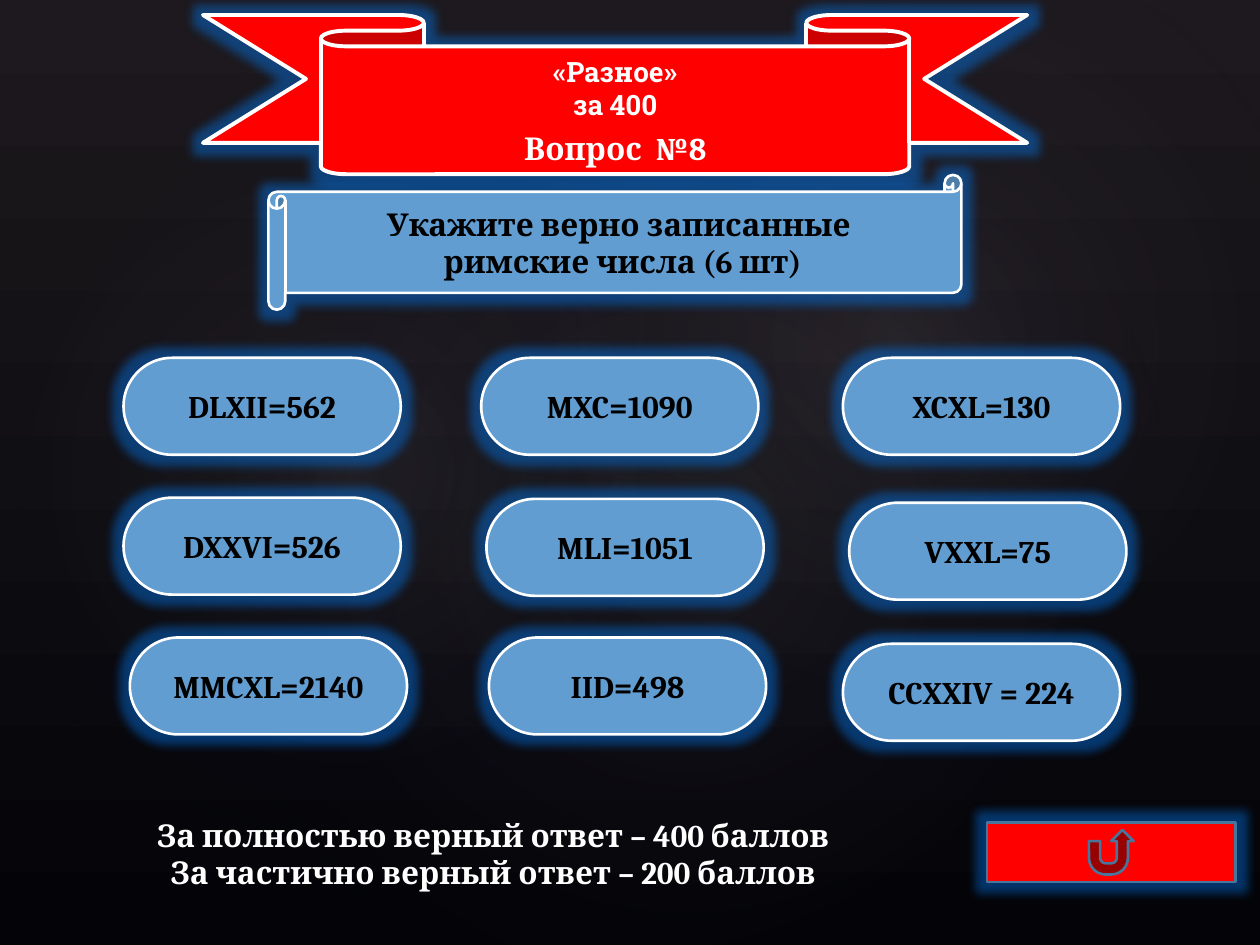
from lxml.etree import SubElement
from pptx import Presentation
from pptx.dml.color import RGBColor
from pptx.enum.shapes import MSO_SHAPE
from pptx.enum.text import MSO_ANCHOR, MSO_AUTO_SIZE, PP_ALIGN
from pptx.oxml import parse_xml
from pptx.oxml.ns import nsdecls, qn
from pptx.util import Pt

BLACK = RGBColor(0x00, 0x00, 0x00)
WHITE = RGBColor(0xFF, 0xFF, 0xFF)
RED = RGBColor(0xFF, 0x00, 0x00)
BLUE = RGBColor(0x62, 0x9D, 0xD1)
STEEL = RGBColor(0x49, 0x74, 0x9B)
GLOW = RGBColor(0x00, 0x7F, 0xFF)
HAZE = RGBColor(0xC4, 0xBC, 0xC6)
NAVY = RGBColor(0x24, 0x28, 0x52)
TOP = RGBColor(0x1D, 0x19, 0x1E)
BASE = RGBColor(0x04, 0x04, 0x08)

BOLD = {"name": "Cambria", "size": Pt(18), "bold": True}
SLAB = {"name": "Roboto Slab", "size": Pt(16), "bold": True}
FRAME = {"word_wrap": True, "vertical_anchor": MSO_ANCHOR.MIDDLE,
         "auto_size": MSO_AUTO_SIZE.NONE,
         "margin_left": Pt(7.2), "margin_right": Pt(7.2),
         "margin_top": Pt(3.6), "margin_bottom": Pt(3.6)}

HAZES = [((108, 82, 570, 449), 328.7, 7),
         ((-21.6, 92, 436, 353), 294.3, 8),
         ((258, 9.4, 510, 374), 328.7, 8)]
CARDS = [("DLXII=562", 70.6, 204.5), ("MXC=1090", 275, 204.5),
         ("XCXL=130", 481.7, 204.5), ("DXXVI=526", 70.6, 284.4),
         ("MLI=1051", 278, 285.1), ("VXXL=75", 485.3, 287.3),
         ("MMCXL=2140", 74.2, 364.3), ("IID=498", 279.4, 364.3),
         ("CCXXIV = 224", 481.7, 367.9)]


def style(item, form):
    """Set each format value on the item."""
    for key, val in form.items():
        setattr(item, key, val)


def write(shape, lines, color):
    """Write centred lines, each a pair of text and font format."""
    frame = shape.text_frame
    style(frame, FRAME)
    for i, (text, font) in enumerate(lines):
        para = frame.add_paragraph() if i else frame.paragraphs[0]
        style(para, {"alignment": PP_ALIGN.CENTER, "space_before": Pt(0)})
        run = para.add_run()
        run.text = text
        style(run.font, font)
        run.font.color.rgb = color


def tint(parent, color, alpha):
    """Add a colour with an opacity in percent."""
    node = SubElement(parent, qn("a:srgbClr"), val=str(color))
    SubElement(node, qn("a:alpha"), val=str(alpha * 1000))


def add_haze(slide, box, turn, alpha):
    """Add a faint round light behind the content."""
    shape = slide.shapes.add_shape(MSO_SHAPE.OVAL, *map(Pt, box))
    style(shape, {"rotation": turn})
    style(shape.shadow, {"inherit": False})
    shape.line.fill.background()
    fill = parse_xml(f'<a:gradFill {nsdecls("a")}><a:gsLst/><a:path path="circle">'
                     '<a:fillToRect l="50000" t="50000" r="50000" b="50000"/>'
                     '</a:path></a:gradFill>')
    for pos, color, part in ((0, HAZE, alpha), (58, NAVY, 0)):
        stop = SubElement(fill[0], qn("a:gs"), pos=str(pos * 1000))
        tint(stop, color, part)
    shape._element.spPr.find(qn("a:prstGeom")).addnext(fill)


def add_form(slide, kind, box, fill, line, width, adj=()):
    """Add a filled preset shape with a blue glow."""
    shape = slide.shapes.add_shape(kind, *map(Pt, box))
    shape.fill.solid()
    shape.fill.fore_color.rgb = fill
    shape.line.color.rgb = line
    shape.line.width = Pt(width)
    for i, val in enumerate(adj):
        shape.adjustments[i] = val
    shape.shadow.inherit = False
    glow = SubElement(shape._element.spPr.find(qn("a:effectLst")),
                      qn("a:glow"), rad=str(Pt(11)))
    tint(glow, GLOW, 40)
    return shape


def add_title(slide):
    """Place the title on the ribbon."""
    title = slide.shapes.title
    style(title, {"left": Pt(183.6), "top": Pt(26.6),
                  "width": Pt(336), "height": Pt(73)})
    write(title, [("«Разное»", SLAB), ("за 400", SLAB), ("Вопрос  №8", BOLD)], WHITE)
    title.text_frame.paragraphs[2].space_before = Pt(4)
    tree = slide.shapes._spTree
    tree.remove(title._element)
    tree.append(title._element)


def paint(slide):
    """Fill the background from dark grey to near black."""
    fill = slide.background.fill
    fill.gradient()
    fill.gradient_angle = 270
    for stop, color, pos in zip(fill.gradient_stops, (TOP, BASE), (0, 1)):
        stop.color.rgb = color
        stop.position = pos


def main():
    """Build the quiz slide."""
    deck = Presentation()
    style(deck, {"slide_width": Pt(720), "slide_height": Pt(540)})
    slide = deck.slides.add_slide(deck.slide_layouts[5])
    paint(slide)
    for haze in HAZES:
        add_haze(slide, *haze)
    add_form(slide, MSO_SHAPE.DOWN_RIBBON, (116, 8.6, 471, 91),
             RED, WHITE, 2.25, (0.197, 0.714))
    add_title(slide)
    add_form(slide, MSO_SHAPE.ACTION_BUTTON_RETURN, (564, 470, 142, 34),
             RED, STEEL, 1.5)
    scroll = add_form(slide, MSO_SHAPE.HORIZONTAL_SCROLL, (153.4, 100, 396, 77),
                      BLUE, WHITE, 1.5)
    write(scroll, [("Укажите верно записанные", BOLD),
                   (" римские числа (6 шт)", BOLD)], BLACK)
    for text, left, top in CARDS:
        card = add_form(slide, MSO_SHAPE.ROUNDED_RECTANGLE, (left, top, 158.4, 55.4),
                        BLUE, WHITE, 1.5, (0.5,))
        write(card, [(text, BOLD)], BLACK)
    note = slide.shapes.add_textbox(*map(Pt, (74.2, 462.2, 415.4, 51)))
    write(note, [("За полностью верный ответ – 400 баллов", BOLD),
                 ("За частично верный ответ – 200 баллов", BOLD)], WHITE)
    deck.save("out.pptx")


if __name__ == "__main__":
    main()
